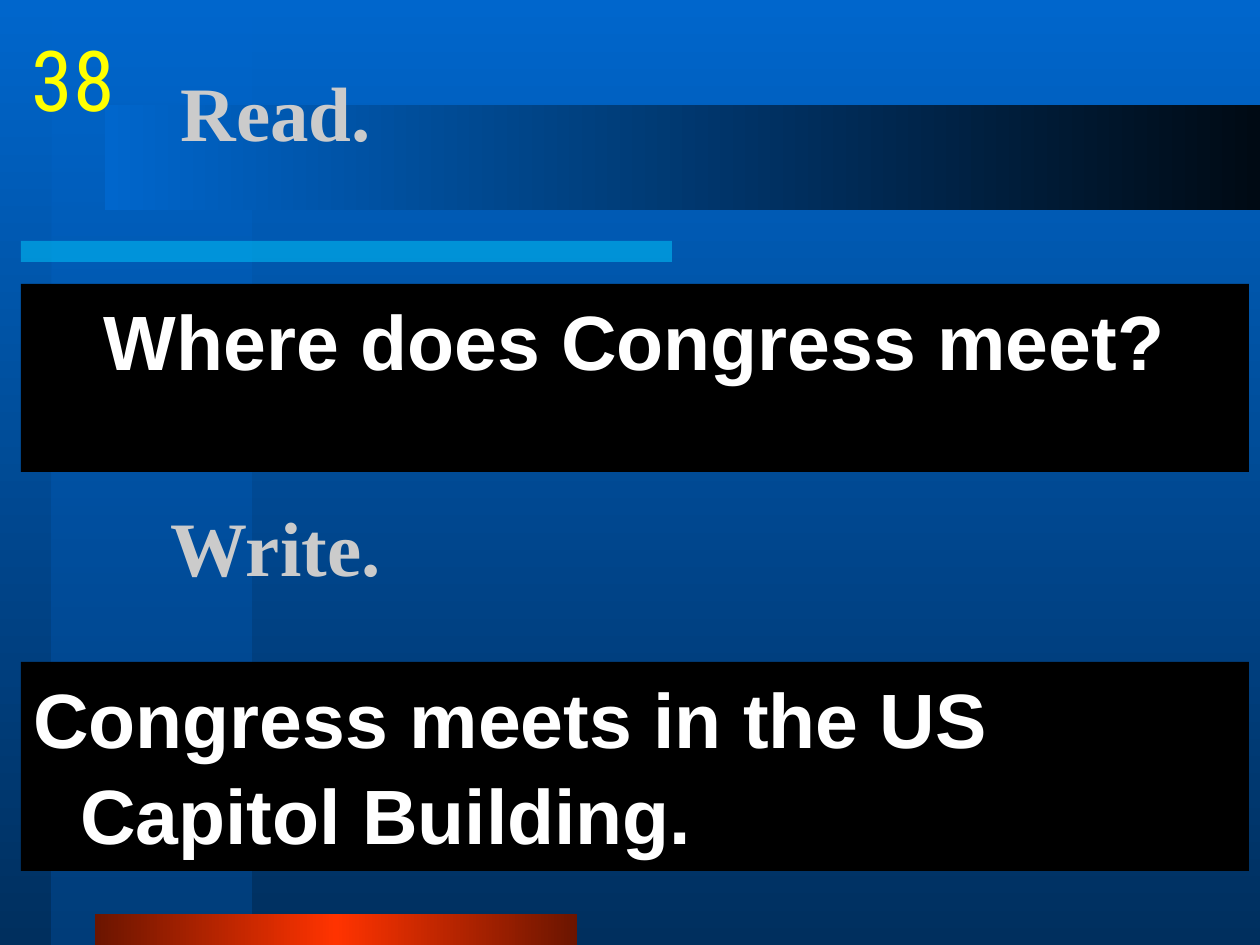
from lxml.etree import SubElement
from pptx import Presentation
from pptx.dml.color import RGBColor
from pptx.enum.shapes import MSO_SHAPE as Shape
from pptx.enum.text import MSO_ANCHOR as Anchor, MSO_AUTO_SIZE as AutoSize, PP_ALIGN as Align
from pptx.oxml.ns import qn
from pptx.util import Emu, Pt

SCALE = 914400 // 126
COLORS = {
    "sky": "0066CC",
    "navy": "002F5E",
    "column": "004A94",
    "night": "000A14",
    "cyan": "00CCFF",
    "red": "FF3300",
    "maroon": "6B1500",
    "black": "000000",
    "white": "FFFFFF",
    "silver": "CBCBCB",
    "yellow": "FFFF00",
}
RIGHT, DOWN = 0, 270


def px(length):
    """Turn pixels into EMU."""
    return Emu(length * SCALE)


def rgb(name):
    """Look up a named colour."""
    return RGBColor.from_string(COLORS[name])


def set_alpha(color, percent):
    """Make a colour element partly transparent."""
    if percent < 100:
        SubElement(color, qn("a:alpha")).set("val", str(percent * 1000))


def set_gradient(fill, owner, names, angle, alpha=100):
    """Fill with evenly spaced colour stops."""
    fill.gradient()
    fill.gradient_angle = angle
    stops = owner.find(".//" + qn("a:gsLst"))
    for stop in list(stops):
        stops.remove(stop)
    for index, name in enumerate(names):
        stop = SubElement(stops, qn("a:gs"))
        stop.set("pos", str(index * 100000 // (len(names) - 1)))
        color = SubElement(stop, qn("a:srgbClr"))
        color.set("val", COLORS[name])
        set_alpha(color, alpha)


def add_bar(slide, box, names, angle=RIGHT, alpha=100):
    """Add a borderless rectangle in one colour or a gradient."""
    shape = slide.shapes.add_shape(Shape.RECTANGLE, *map(px, box))
    shape.shadow.inherit = False
    shape.line.fill.background()
    if len(names) > 1:
        set_gradient(shape.fill, shape._element, names, angle, alpha)
    else:
        shape.fill.solid()
        shape.fill.fore_color.rgb = rgb(names[0])
        set_alpha(shape._element.spPr.find(".//" + qn("a:srgbClr")), alpha)
    return shape


def set_text(shape, text, font_name, size, color, bold=True, align=Align.LEFT,
             anchor=Anchor.MIDDLE, wrap=True):
    """Write one formatted paragraph and return it."""
    frame = shape.text_frame
    frame.text = text
    frame.word_wrap = wrap
    frame.auto_size = AutoSize.NONE
    frame.vertical_anchor = anchor
    paragraph = frame.paragraphs[0]
    paragraph.alignment = align
    font = paragraph.runs[0].font
    font.name, font.size, font.bold = font_name, Pt(size), bold
    font.color.rgb = rgb(color)
    return paragraph


def add_title(slide, box, text):
    """Place the title above the decoration."""
    title = slide.shapes.title
    title.left, title.top, title.width, title.height = map(px, box)
    slide.shapes._spTree.append(title._element)
    set_text(title, text, "Times New Roman", 44, "silver")


def add_text_box(slide, box, text, *style, **options):
    """Add a text box with one paragraph."""
    set_text(slide.shapes.add_textbox(*map(px, box)), text, *style, **options)


def add_panel(slide, box, text, align):
    """Add a black panel with a hanging sentence."""
    panel = add_bar(slide, box, ["black"])
    paragraph = set_text(panel, text, "Arial", 44, "white", align=align, anchor=Anchor.TOP)
    paragraph.space_before = Pt(3)
    paragraph.line_spacing = 1.04
    properties = paragraph._p.get_or_add_pPr()
    properties.set("marL", str(px(47)))
    properties.set("indent", str(-px(47)))


def main():
    """Build the slide."""
    presentation = Presentation()
    presentation.slide_width, presentation.slide_height = px(1260), px(945)
    slide = presentation.slides.add_slide(presentation.slide_layouts[5])
    set_gradient(slide.background.fill, slide._element, ["sky", "navy"], DOWN)

    add_bar(slide, (52, 0, 200, 945), ["sky", "column"], DOWN, alpha=50)
    add_bar(slide, (21, 241, 651, 21), ["cyan"], alpha=50)
    add_bar(slide, (95, 914, 482, 31), ["maroon", "red", "maroon"])
    add_bar(slide, (105, 105, 1155, 105), ["sky", "night"])

    add_title(slide, (168, 32, 1071, 157), "Read.")
    add_panel(slide, (21, 284, 1228, 188), "Where does Congress meet?", Align.CENTER)
    add_text_box(slide, (158, 441, 1071, 210), "Write.", "Times New Roman", 44, "silver")
    add_panel(slide, (21, 662, 1228, 209), "Congress meets in the US Capitol Building.", Align.LEFT)
    add_text_box(slide, (21, 21, 105, 105), "38", "Roboto Condensed", 48, "yellow",
                 bold=False, align=Align.CENTER, anchor=Anchor.TOP, wrap=False)
    presentation.save("out.pptx")


if __name__ == "__main__":
    main()
